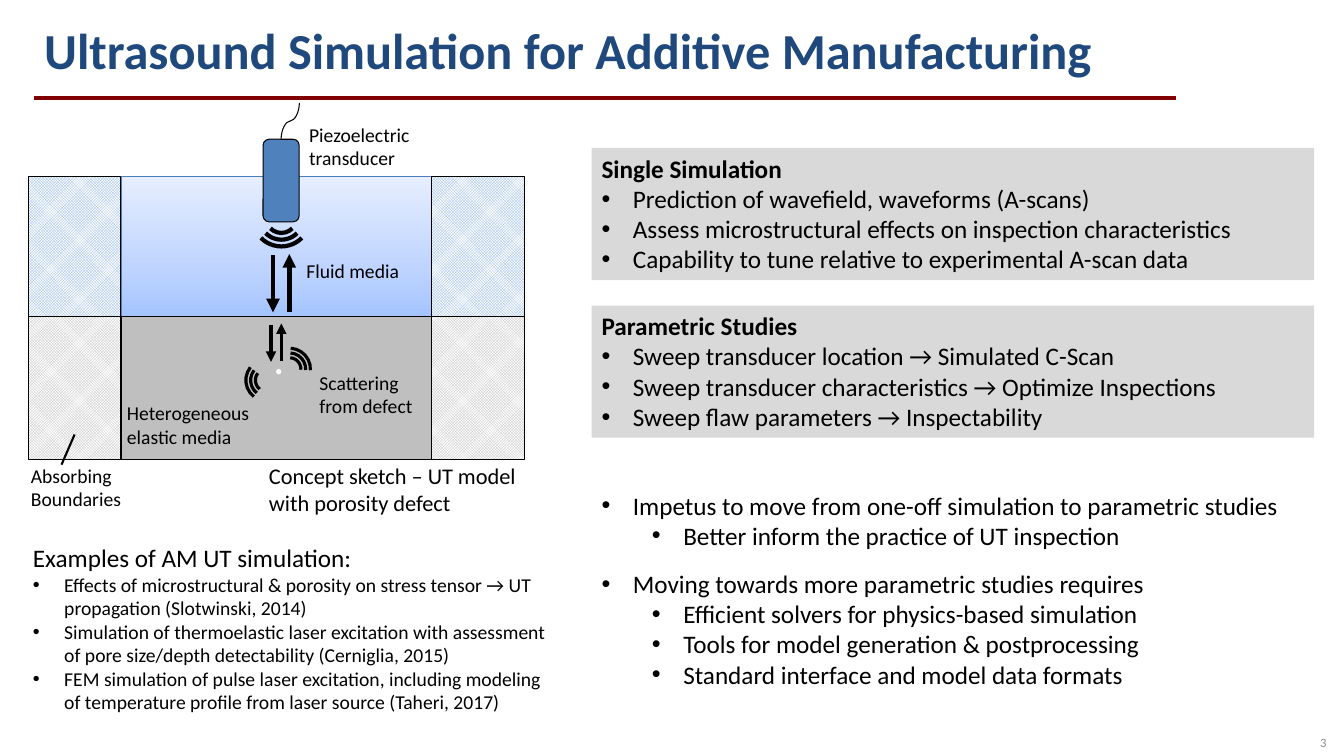
from copy import deepcopy

from lxml.etree import SubElement
from pptx import Presentation
from pptx.dml.color import RGBColor
from pptx.enum.dml import MSO_PATTERN
from pptx.enum.shapes import MSO_CONNECTOR, MSO_SHAPE
from pptx.enum.text import MSO_ANCHOR, PP_ALIGN
from pptx.oxml.ns import qn
from pptx.util import Cm, Pt

BLACK = RGBColor(0x00, 0x00, 0x00)
WHITE = RGBColor(0xFF, 0xFF, 0xFF)
NAVY = RGBColor(0x1F, 0x49, 0x7D)
DARK_RED = RGBColor(0x80, 0x00, 0x00)
BLUE = RGBColor(0x4F, 0x81, 0xBD)
EDGE_BLUE = RGBColor(0x4B, 0x7E, 0xBC)
CHECK_BLUE = RGBColor(0x8E, 0xB4, 0xE3)
GREY = RGBColor(0xBF, 0xBF, 0xBF)
PANEL_GREY = RGBColor(0xD9, 0xD9, 0xD9)
NUMBER_GREY = RGBColor(0x8C, 0x8C, 0x8C)
WATER = [(0, RGBColor(0xA4, 0xC4, 0xFF)),
         (0.35, RGBColor(0xBF, 0xD4, 0xFF)),
         (1, RGBColor(0xE6, 0xEE, 0xFF))]


class SlideBuilder:
    """Holds the slide and its style; all lengths are in centimetres."""

    font = "Calibri"
    indent = 0.79
    level_step = 1.27

    def __init__(self, deck):
        self.slide = deck.slides.add_slide(deck.slide_layouts[5])
        self.shapes = self.slide.shapes

    def style(self, paragraph, size, color=BLACK, bold=False):
        font = paragraph.font
        font.name, font.size, font.bold = self.font, Pt(size), bold
        font.color.rgb = color

    def title(self, text, left, top, width, height):
        title = self.shapes.title
        title.left, title.top = Cm(left), Cm(top)
        title.width, title.height = Cm(width), Cm(height)
        frame = title.text_frame
        frame.text = text
        frame.vertical_anchor = MSO_ANCHOR.MIDDLE
        frame.paragraphs[0].alignment = PP_ALIGN.LEFT
        self.style(frame.paragraphs[0], 36, NAVY, bold=True)

    def shape(self, kind, left, top, width, height, fill=None, line=BLACK, weight=0.75):
        shape = self.shapes.add_shape(kind, Cm(left), Cm(top), Cm(width), Cm(height))
        shape.shadow.inherit = False
        if fill is None:
            shape.fill.background()
        else:
            shape.fill.solid()
            shape.fill.fore_color.rgb = fill
        if line is None:
            shape.line.fill.background()
        else:
            shape.line.color.rgb = line
            shape.line.width = Pt(weight)
        return shape

    def checkered(self, left, top, width, height, color):
        fill = self.shape(MSO_SHAPE.RECTANGLE, left, top, width, height).fill
        fill.patterned()
        fill.pattern = MSO_PATTERN.SMALL_CHECKER_BOARD
        fill.fore_color.rgb = color
        fill.back_color.rgb = WHITE

    def gradient(self, left, top, width, height, stops, line):
        fill = self.shape(MSO_SHAPE.RECTANGLE, left, top, width, height, line=line).fill
        fill.gradient()
        fill.gradient_angle = 90
        first = fill.gradient_stops[0]._gs
        first.addnext(deepcopy(first))
        for stop, (position, color) in zip(fill.gradient_stops, stops):
            stop.position = position
            stop.color.rgb = color

    def waves(self, center_x, center_y, sizes, rotation, weight):
        for size in sizes:
            arc = self.shape(MSO_SHAPE.ARC, center_x - size / 2, center_y - size / 2,
                             size, size, weight=weight)
            arc.rotation = rotation

    def line(self, start, end, weight, color=BLACK, arrow=False, kind=MSO_CONNECTOR.STRAIGHT):
        points = [Cm(value) for value in (*start, *end)]
        connector = self.shapes.add_connector(kind, *points)
        connector.line.color.rgb = color
        connector.line.width = Pt(weight)
        if arrow:
            SubElement(connector.line._get_or_add_ln(), qn("a:tailEnd"), type="triangle")
        SubElement(connector._element.spPr, qn("a:effectLst"))
        return connector

    def text(self, lines, left, top, width, height, size=14, color=BLACK):
        box = self.shapes.add_textbox(Cm(left), Cm(top), Cm(width), Cm(height))
        frame = box.text_frame
        frame.word_wrap = True
        frame.text = "\n".join(lines)
        for paragraph in frame.paragraphs:
            self.style(paragraph, size, color)
        return frame

    def bullet(self, paragraph, text, size=18, level=0):
        paragraph.text = text
        paragraph.level = level
        properties = paragraph._p.get_or_add_pPr()
        properties.set("marL", str(Cm(self.indent + level * self.level_step)))
        properties.set("indent", str(-Cm(self.indent)))
        SubElement(properties, qn("a:buFont"), typeface="Arial")
        SubElement(properties, qn("a:buChar"), char="•")
        self.style(paragraph, size)

    def headed_list(self, frame, heading, items, size=18, bold=True):
        frame.text = heading
        self.style(frame.paragraphs[0], 18, bold=bold)
        for item in items:
            self.bullet(frame.add_paragraph(), item, size)

    def panel(self, heading, items, left, top, width, height):
        box = self.shape(MSO_SHAPE.RECTANGLE, left, top, width, height, PANEL_GREY, None)
        frame = box.text_frame
        frame.word_wrap = True
        frame.vertical_anchor = MSO_ANCHOR.TOP
        self.headed_list(frame, heading, items)
        for paragraph in frame.paragraphs:
            paragraph.alignment = PP_ALIGN.LEFT


def draw_sketch(page):
    # Media and absorbing boundaries
    page.gradient(3.05, 4.45, 7.82, 3.53, WATER, EDGE_BLUE)
    page.shape(MSO_SHAPE.RECTANGLE, 3.05, 7.98, 7.82, 3.61, GREY)
    for left in (0.71, 10.87):
        page.checkered(left, 7.98, 2.34, 3.61, GREY)
        page.checkered(left, 4.45, 2.34, 3.53, CHECK_BLUE)

    # Transducer with its cord, a curve turned upright
    page.shape(MSO_SHAPE.ROUNDED_RECTANGLE, 6.63, 3.51, 0.91, 2.08, BLUE)
    cord = page.line((7.77, 3.28), (6.86, 2.82), 0.75, kind=MSO_CONNECTOR.CURVE)
    cord._element.spPr.xfrm.set("rot", str(90 * 60000))

    # Waves, arrows and the defect
    page.waves(7.09, 5.48, (1.46, 1.12, 0.78), 135, 3)
    for x, start, end, weight in ((6.88, 6.43, 7.87, 3.25), (7.29, 7.85, 6.4, 3.25),
                                  (6.83, 8.18, 9.12, 2.5), (7.09, 9.09, 8.15, 2.5)):
        page.line((x, start), (x, end), weight, arrow=True)
    page.shape(MSO_SHAPE.OVAL, 6.96, 9.3, 0.13, 0.13, WHITE, None)
    for x, y, rotation in ((7.3, 9.3, 3.2), (6.72, 9.58, 218.3)):
        page.waves(x, y, (1.05, 0.81, 0.57), rotation, 2.25)

    # Labels
    page.text(["Scattering from defect"], 7.8, 9.22, 2.87, 1.45)
    page.text(["Fluid media"], 7.47, 6.4, 2.92, 0.86)
    page.text(["Heterogeneous elastic media"], 2.95, 9.98, 3.78, 1.45)
    page.text(["Absorbing", "Boundaries"], 0.53, 11.56, 3.78, 1.45)
    page.line((1.88, 10.95), (1.55, 11.71), 1.5)
    page.text(["Piezoelectric transducer"], 7.54, 2.97, 3.25, 1.45)
    page.text(["Concept sketch – UT model with porosity defect"], 6.53, 11.53, 7.54, 1.63, 16)


def main():
    deck = Presentation()
    deck.slide_width, deck.slide_height = Cm(33.87), Cm(19.05)
    page = SlideBuilder(deck)

    # Title, rule and page number
    page.line((0.85, 2.46), (29.63, 2.46), 3, DARK_RED)
    page.title("Ultrasound Simulation for Additive Manufacturing", 0.86, 0.2, 32.16, 2.08)
    number = page.text(["3"], 32.21, 18.34, 1.47, 0.74, 9, NUMBER_GREY)
    number.vertical_anchor = MSO_ANCHOR.MIDDLE
    number.paragraphs[0].alignment = PP_ALIGN.RIGHT

    draw_sketch(page)

    # Grey panels
    page.panel("Single Simulation", [
        "Prediction of wavefield, waveforms (A-scans)",
        "Assess microstructural effects on inspection characteristics",
        "Capability to tune relative to experimental A-scan data"], 14.91, 3.73, 18.21, 3.33)
    page.panel("Parametric Studies", [
        "Sweep transducer location → Simulated C-Scan",
        "Sweep transducer characteristics → Optimize Inspections",
        "Sweep flaw parameters → Inspectability"], 14.91, 7.7, 18.21, 3.33)

    # Motivation
    motivation = [
        (0, "Impetus to move from one-off simulation to parametric studies"),
        (1, "Better inform the practice of UT inspection"),
        (0, "Moving towards more parametric studies requires"),
        (1, "Efficient solvers for physics-based simulation"),
        (1, "Tools for model generation & postprocessing"),
        (1, "Standard interface and model data formats")]
    frame = page.text([text for _, text in motivation], 14.91, 12.22, 17.96, 5.33)
    for paragraph, (level, text) in zip(frame.paragraphs, motivation):
        page.bullet(paragraph, text, level=level)
    frame.paragraphs[2].space_before = Pt(12.8)

    # Examples
    frame = page.text([], 0.58, 13.54, 13.46, 4.62)
    page.headed_list(frame, "Examples of AM UT simulation:", [
        "Effects of microstructural & porosity on stress tensor → UT propagation (Slotwinski, 2014)",
        "Simulation of thermoelastic laser excitation with assessment of pore size/depth "
        "detectability (Cerniglia, 2015)",
        "FEM simulation of pulse laser excitation, including modeling of temperature profile "
        "from laser source (Taheri, 2017)"], size=14, bold=False)

    deck.save("out.pptx")


if __name__ == "__main__":
    main()
